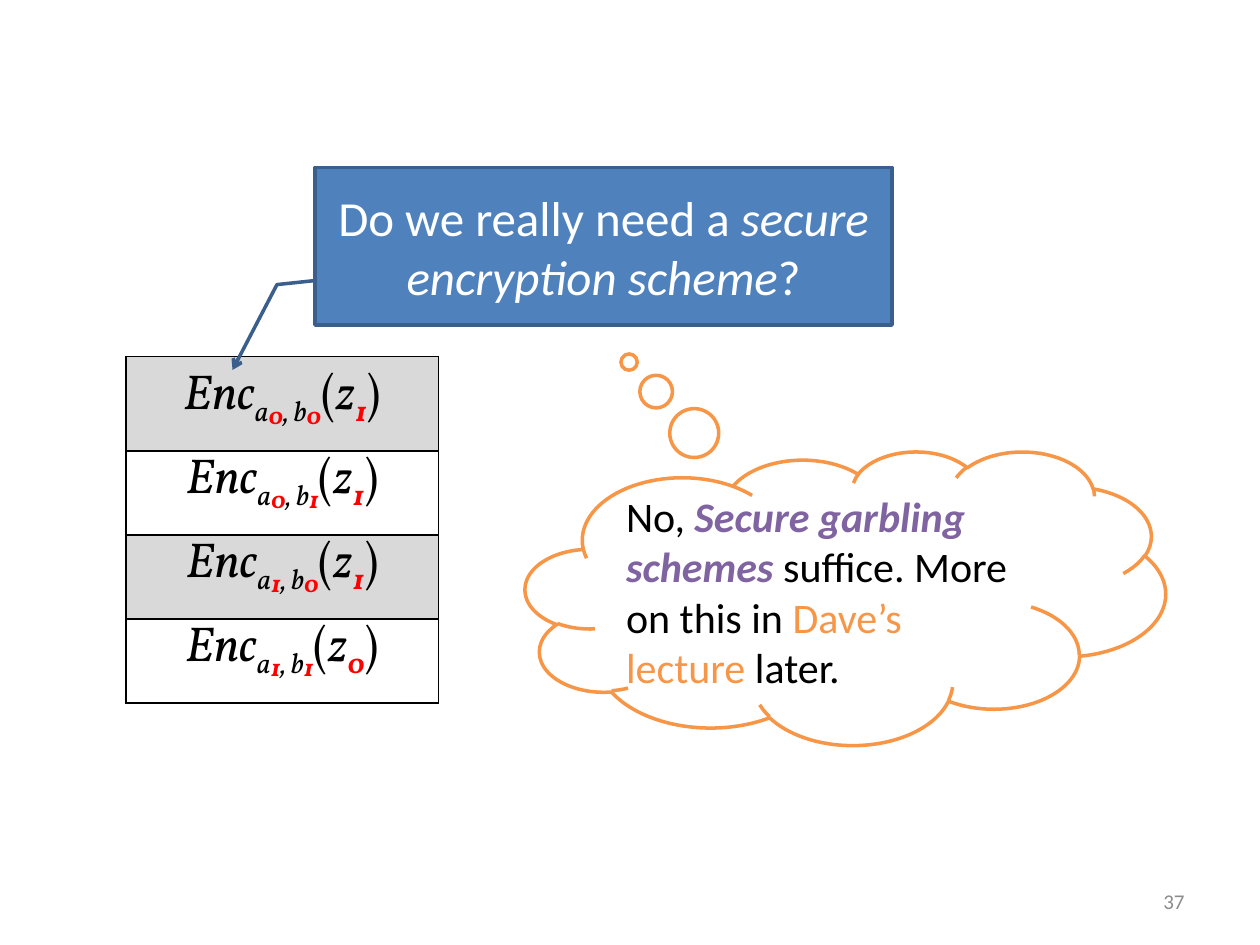
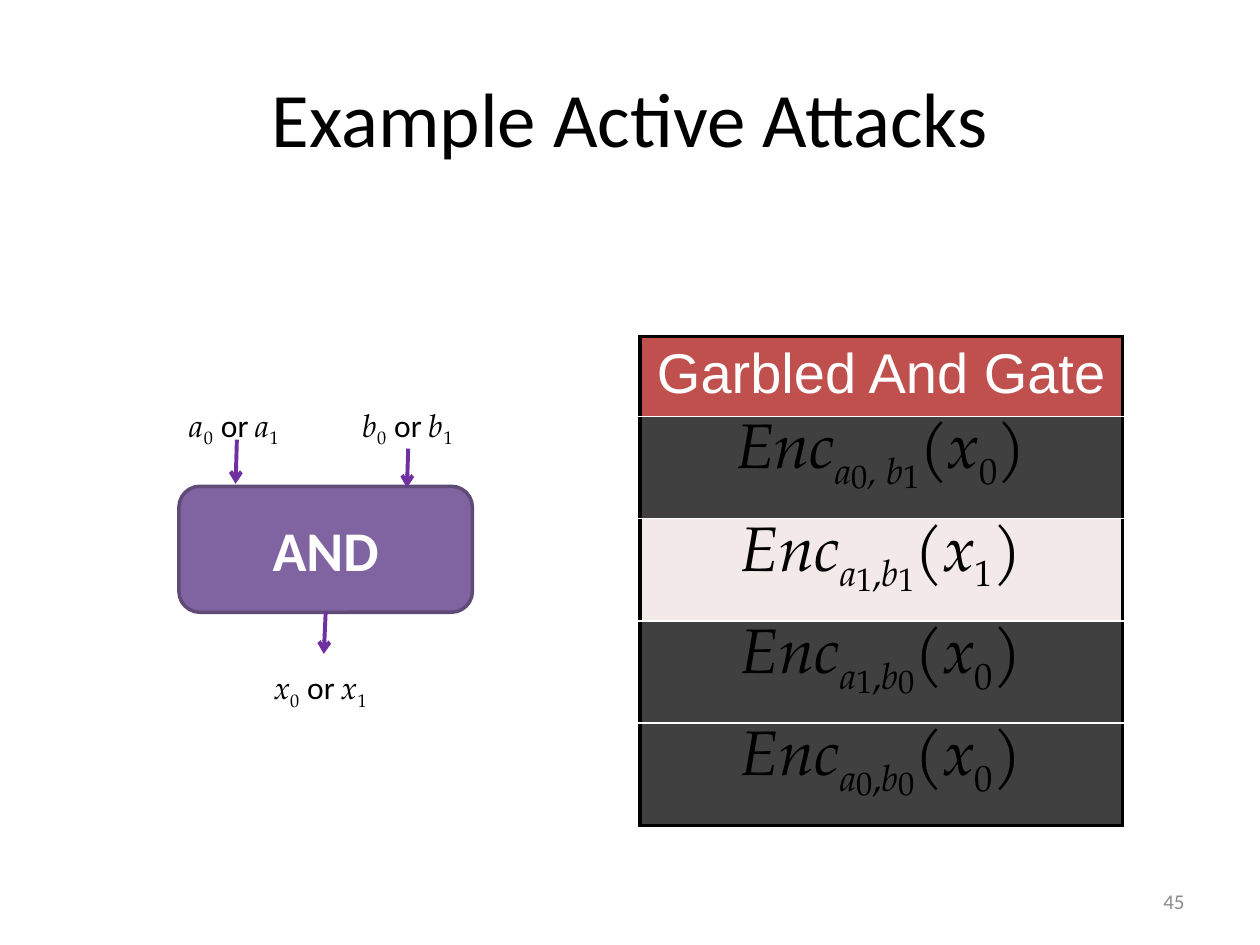
from lxml.etree import SubElement
from pptx import Presentation
from pptx.dml.color import RGBColor
from pptx.enum.shapes import MSO_CONNECTOR, MSO_SHAPE
from pptx.enum.text import MSO_ANCHOR, MSO_AUTO_SIZE, PP_ALIGN
from pptx.oxml.ns import qn
from pptx.util import Inches, Pt

rgb = RGBColor.from_string
BLACK, WHITE, RED = "000000", "FFFFFF", "FF0000"
GRAY, DARK_GRAY, PAGE_GRAY = "D9D9D9", "404040", "8C8C8C"
BLUE, ORANGE, PURPLE, ARROW_PURPLE = "4F81BD", "F79646", "8064A2", "7030A0"
BODY_FONT, MATH_FONT = "Calibri", "TeX Gyre Pagella"


def write(paragraph, runs, size, color=BLACK, font=BODY_FONT, align=PP_ALIGN.CENTER):
    """Fill a paragraph with (text, style) runs; a style names only what differs."""
    paragraph.alignment = align
    paragraph.font.size = Pt(size)
    paragraph.font.name = font
    paragraph.font.color.rgb = rgb(color)
    for text, style in runs:
        run = paragraph.add_run()
        run.text = text
        for name, value in style.items():
            if name == "color":
                run.font.color.rgb = rgb(value)
            elif name == "baseline":
                run.font._element.set("baseline", str(value * 1000))
            else:
                setattr(run.font, name, value)


def set_borders(cell, **borders):
    """Draw the sides L, R, T and B, each given as (colour, points); call before filling."""
    properties = cell._tc.get_or_add_tcPr()
    for side in "LRTB":
        color, width = borders[side]
        line = SubElement(properties, qn(f"a:ln{side}"), w=str(Pt(width)))
        fill = SubElement(line, qn("a:solidFill"))
        SubElement(fill, qn("a:srgbClr"), val=color)


presentation = Presentation()
presentation.slide_width, presentation.slide_height = Inches(10), Inches(7.5)
blank = presentation.slide_layouts[6]
question_slide, attack_slide = [presentation.slides.add_slide(blank) for _ in range(2)]

for slide, number in ((question_slide, "37"), (attack_slide, "45")):
    box = slide.shapes.add_textbox(Inches(7.17), Inches(6.95), Inches(2.33), Inches(0.4))
    box.text_frame.word_wrap = True
    box.text_frame.vertical_anchor = MSO_ANCHOR.MIDDLE
    write(box.text_frame.paragraphs[0], [(number, {})], 12, PAGE_GRAY, align=PP_ALIGN.RIGHT)

italic = {"italic": True}
subscript = {"baseline": -25}
italic_subscript = italic | subscript

# Slide 37: the encrypted rows overlap, so the lowest is placed first
red_digit = italic | {"bold": True, "color": RED}
key_digit = red_digit | {"size": Pt(24), "baseline": -36}
for row, (a, b, z) in reversed(list(enumerate(["001", "011", "101", "110"]))):
    frame = question_slide.shapes.add_table(
        1, 1, Inches(1), Inches(2.83 + row * 2 / 3), Inches(2.48), Inches(0.58))
    frame.height = Inches(0.67)
    frame.table.first_row = frame.table.horz_banding = False
    cell = frame.table.cell(0, 0)
    cell.margin_bottom = Inches(0.15)
    set_borders(cell, **dict.fromkeys("LRTB", (BLACK, 1)))
    cell.fill.solid()
    cell.fill.fore_color.rgb = rgb(WHITE if row % 2 else GRAY)
    write(cell.text_frame.paragraphs[0], [
        ("Enc", italic), ("a", italic_subscript), (a, key_digit),
        (", b", italic_subscript), (b, key_digit),
        ("(", {}), ("z", italic), (z, red_digit | subscript), (")", {}),
    ], 28, font="Vollkorn")

question = question_slide.shapes.add_shape(
    MSO_SHAPE.LINE_CALLOUT_2, Inches(2.5), Inches(1.33), Inches(4.58), Inches(1.25))
answer = question_slide.shapes.add_shape(
    MSO_SHAPE.CLOUD_CALLOUT, Inches(4.17), Inches(3.58), Inches(5.08), Inches(2.33))
gate = attack_slide.shapes.add_shape(
    MSO_SHAPE.ROUNDED_RECTANGLE, Inches(1.42), Inches(3.86), Inches(2.33), Inches(1))

for index, value in enumerate([0.718, -0.001, 0.743, -0.066, 1.285, -0.143]):
    question.adjustments[index] = value
for index, value in enumerate([-0.338, -0.803]):
    answer.adjustments[index] = value

for shape, fill, outline in ((question, BLUE, "3A5F8C"), (answer, WHITE, ORANGE),
                             (gate, PURPLE, "5F4A78")):
    shape.shadow.inherit = False
    shape.fill.solid()
    shape.fill.fore_color.rgb = rgb(fill)
    shape.line.color.rgb = rgb(outline)
    shape.line.width = Pt(2)
    shape.text_frame.word_wrap = True
    shape.text_frame.vertical_anchor = MSO_ANCHOR.MIDDLE

write(question.text_frame.paragraphs[0], [
    ("Do we really need a ", {}), ("secure encryption scheme", italic), ("?", {}),
], 28, WHITE)
black = {"color": BLACK}
write(answer.text_frame.paragraphs[0], [
    ("No, ", black),
    ("Secure garbling schemes ", {"color": PURPLE, "bold": True, "italic": True}),
    ("suffice. More on this in ", black),
    ("Dave’s lecture", {"color": ORANGE}),
    (" later.", black),
], 24, align=PP_ALIGN.LEFT)
write(gate.text_frame.paragraphs[0], [("AND", {"bold": True})], 32, WHITE)

# Slide 45: title, garbled table and the gate's wires
title = attack_slide.shapes.add_textbox(Inches(0.5), Inches(0.3), Inches(9), Inches(1.25))
title.text_frame.word_wrap = True
title.text_frame.vertical_anchor = MSO_ANCHOR.MIDDLE
write(title.text_frame.paragraphs[0], [("Example Active Attacks", {})], 44)

garbled_rows = [("0", ", ", "1", "0"), ("1", ",", "1", "1"),
                ("1", ",", "0", "0"), ("0", ",", "0", "0")]
frame = attack_slide.shapes.add_table(
    5, 1, Inches(5.08), Inches(2.67), Inches(3.83), Inches(3.43))
table = frame.table
table.first_row = table.horz_banding = False
outer, inner = (BLACK, 2.25), (WHITE, 1)
row_fills = ["C0504D", DARK_GRAY, "F4E9E9", DARK_GRAY, DARK_GRAY]
for row, fill in enumerate(row_fills):
    table.rows[row].height = Inches(0.41 if row else 0.22)
    cell = table.cell(row, 0)
    set_borders(cell, L=outer, R=outer, T=inner if row else outer,
                B=outer if row == 4 else inner)
    cell.fill.solid()
    cell.fill.fore_color.rgb = rgb(fill)
frame.height = Inches(3.43)

write(table.cell(0, 0).text_frame.paragraphs[0], [("Garbled And Gate", {})],
      32, WHITE, "Arial")
key_digit = {"size": Pt(32), "baseline": -36}
for row, (a, comma, b, x) in enumerate(garbled_rows, start=1):
    write(table.cell(row, 0).text_frame.paragraphs[0], [
        ("Enc", italic), ("a", italic_subscript), (a, key_digit),
        (comma, italic_subscript if row == 1 else subscript),
        ("b", italic_subscript), (b, key_digit),
        ("(", {}), ("x", italic), (x, subscript), (")", {}),
    ], 36, font=MATH_FONT)

for wire, left, top in (("a", 1.41, 3.17), ("b", 2.78, 3.17), ("x", 2.08, 5.25)):
    label = attack_slide.shapes.add_textbox(Inches(left), Inches(top), Inches(0.97), Inches(0.4))
    label.text_frame.word_wrap = False
    label.text_frame.auto_size = MSO_AUTO_SIZE.SHAPE_TO_FIT_TEXT
    write(label.text_frame.paragraphs[0], [
        (wire, italic), ("0", subscript), (" ", {}), ("or ", {"name": BODY_FONT}),
        (wire, italic), ("1", subscript),
    ], 18, font=MATH_FONT, align=PP_ALIGN.LEFT)

arrows = []
for x, top, bottom in ((1.88, 3.49, 3.84), (3.24, 3.56, 3.87), (2.58, 4.86, 5.19)):
    arrow = attack_slide.shapes.add_connector(
        MSO_CONNECTOR.STRAIGHT, Inches(x), Inches(top), Inches(x - 0.01), Inches(bottom))
    arrow.line.color.rgb = rgb(ARROW_PURPLE)
    arrow.line.width = Pt(2.25)
    SubElement(arrow._element.spPr, qn("a:effectLst"))
    arrows.append(arrow)
arrows[-1].begin_connect(gate, 2)

for pointer in [question, *arrows]:
    SubElement(pointer._element.spPr.find(qn("a:ln")), qn("a:tailEnd"), type="arrow")

presentation.save("out.pptx")
